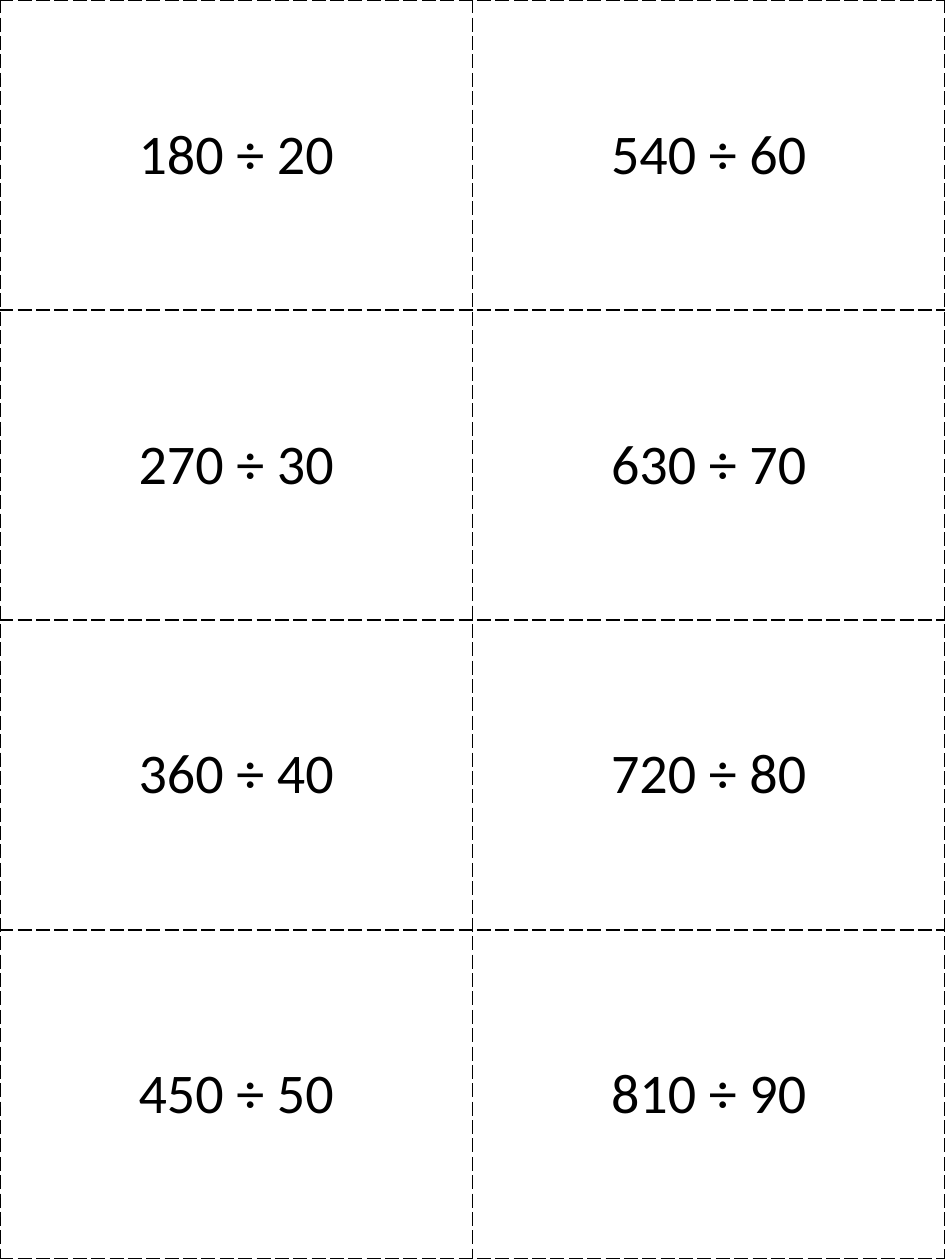
from lxml.etree import SubElement
from pptx import Presentation
from pptx.dml.color import RGBColor
from pptx.enum.text import MSO_ANCHOR, PP_ALIGN
from pptx.oxml.ns import qn
from pptx.util import Inches, Pt

COLORS = {"background": "FFFFFF", "ink": "000000"}
COLUMN_WIDTHS = [3.75, 3.75]
ROW_HEIGHTS = [2.46, 2.46, 2.46, 2.61]
QUOTIENT = 9
FIRST_DIVISOR = 20


def write_text(frame, text, *, font="Calibri", size=32, color="ink",
               align=PP_ALIGN.CENTER):
    paragraph = frame.paragraphs[0]
    paragraph.alignment = align
    run = paragraph.add_run()
    run.text = text
    run.font.name = font
    run.font.size = Pt(size)
    run.font.color.rgb = RGBColor.from_string(COLORS[color])


class CardSheet:
    """Holds the slide and the style of its cut-out cards."""

    def __init__(self, slide, line_width=1, dash="lgDash"):
        self.slide = slide
        self.line_width = line_width
        self.dash = dash

    def background(self, color):
        fill = self.slide.background.fill
        fill.solid()
        fill.fore_color.rgb = RGBColor.from_string(COLORS[color])

    def borders(self, cell):
        properties = cell._tc.get_or_add_tcPr()
        for side in ("a:lnL", "a:lnR", "a:lnT", "a:lnB"):
            line = SubElement(properties, qn(side), w=str(Pt(self.line_width)))
            ink = SubElement(line, qn("a:solidFill"))
            SubElement(ink, qn("a:srgbClr"), val=COLORS["ink"])
            SubElement(line, qn("a:prstDash"), val=self.dash)

    def card(self, cell, text):
        self.borders(cell)
        cell.fill.background()
        cell.vertical_anchor = MSO_ANCHOR.MIDDLE
        write_text(cell.text_frame, text)

    def table(self, widths, heights):
        cards = self.slide.shapes.add_table(
            len(heights), len(widths), 0, 0,
            Inches(sum(widths)), Inches(sum(heights))).table
        cards.first_row = False
        cards.horz_banding = False
        for column, width in zip(cards.columns, widths):
            column.width = Inches(width)
        for row, height in zip(cards.rows, heights):
            row.height = Inches(height)
        return cards


def main():
    presentation = Presentation()
    presentation.slide_width = Inches(7.5)
    presentation.slide_height = Inches(10)
    blank_layout = presentation.slide_layouts[6]
    sheet = CardSheet(presentation.slides.add_slide(blank_layout))
    sheet.background("background")

    # Division cards, running down each column
    cards = sheet.table(COLUMN_WIDTHS, ROW_HEIGHTS)
    for column in range(len(COLUMN_WIDTHS)):
        for row in range(len(ROW_HEIGHTS)):
            position = column * len(ROW_HEIGHTS) + row
            divisor = FIRST_DIVISOR + 10 * position
            sheet.card(cards.cell(row, column),
                       f"{QUOTIENT * divisor} ÷ {divisor}")

    presentation.save("out.pptx")


if __name__ == "__main__":
    main()
